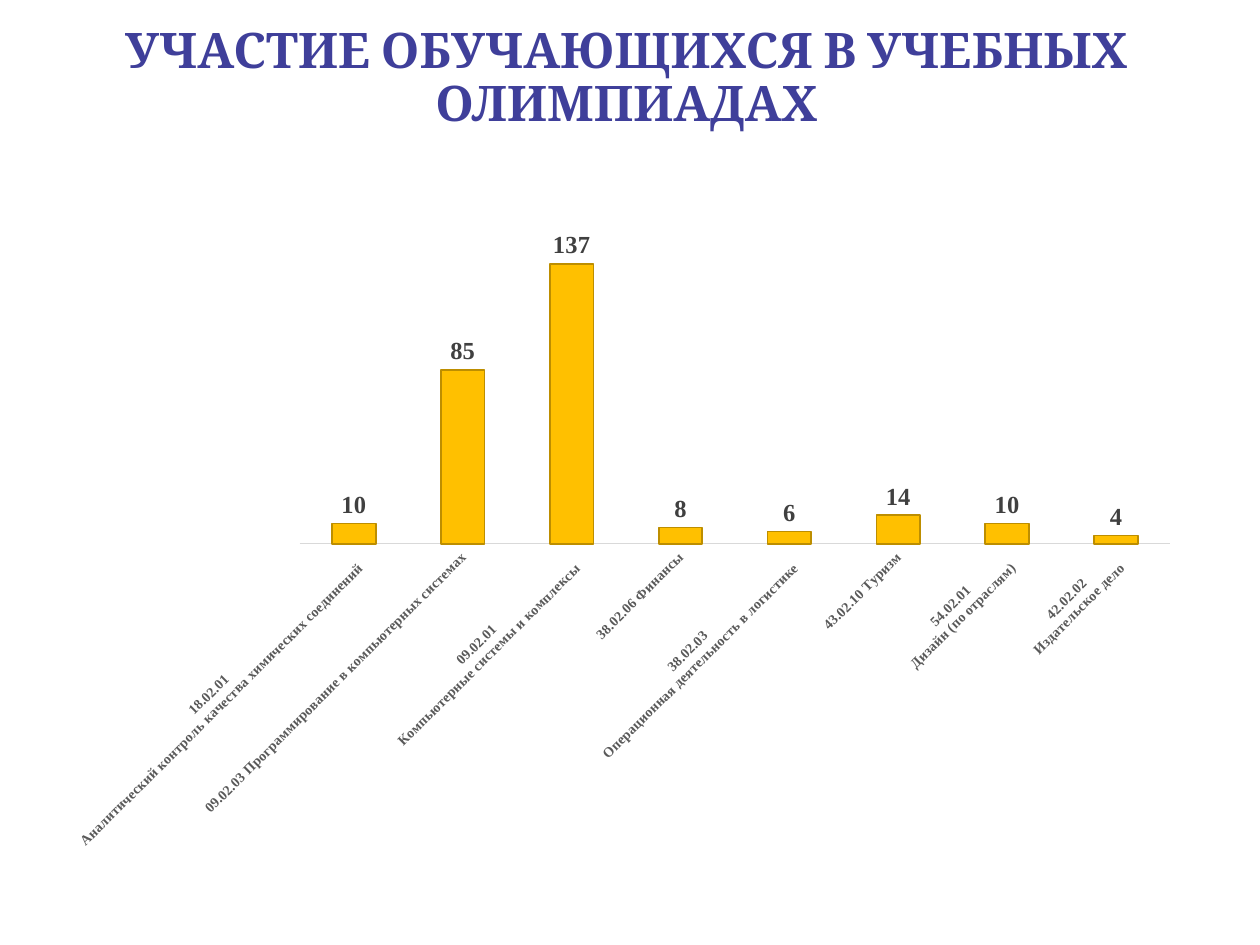
from pptx import Presentation
from pptx.chart.data import CategoryChartData
from pptx.dml.color import RGBColor
from pptx.enum.chart import XL_CHART_TYPE, XL_LABEL_POSITION, XL_TICK_MARK
from pptx.enum.text import MSO_ANCHOR, PP_ALIGN
from pptx.util import Pt

COLUMN_CLUSTERED = XL_CHART_TYPE.COLUMN_CLUSTERED
OUTSIDE_END = XL_LABEL_POSITION.OUTSIDE_END
NO_TICK = XL_TICK_MARK.NONE
MIDDLE = MSO_ANCHOR.MIDDLE
CENTER = PP_ALIGN.CENTER

INDIGO = RGBColor(0x3F, 0x3F, 0x9A)
GOLD = RGBColor(0xFF, 0xC0, 0x00)
DARK_GOLD = RGBColor(0xBD, 0x8E, 0x00)
BLACK = RGBColor(0x00, 0x00, 0x00)
DARK_GRAY = RGBColor(0x40, 0x40, 0x40)
GRAY = RGBColor(0x59, 0x59, 0x59)
LIGHT_GRAY = RGBColor(0xD9, 0xD9, 0xD9)

PARTICIPANTS = [
    ("18.02.01 \nАналитический контроль качества химических соединений", 10),
    ("09.02.03 Программирование в компьютерных системах", 85),
    ("09.02.01 \nКомпьютерные системы и комплексы", 137),
    ("38.02.06 Финансы", 8),
    ("38.02.03 \nОперационная деятельность в логистике", 6),
    ("43.02.10 Туризм", 14),
    ("54.02.01 \nДизайн (по отраслям)", 10),
    ("42.02.02 \nИздательское дело", 4),
]


def style_font(font, name, size, color):
    font.name = name
    font.size = Pt(size)
    font.bold = True
    font.color.rgb = color


presentation = Presentation()
presentation.slide_width = Pt(720)
presentation.slide_height = Pt(540)
slide = presentation.slides.add_slide(presentation.slide_layouts[6])

# Title
title = slide.shapes.add_textbox(Pt(34), Pt(0), Pt(648), Pt(90))
title.text_frame.word_wrap = True
title.text_frame.vertical_anchor = MIDDLE
paragraph = title.text_frame.paragraphs[0]
paragraph.alignment = CENTER
paragraph.line_spacing = 0.9
run = paragraph.add_run()
run.text = "УЧАСТИЕ ОБУЧАЮЩИХСЯ В УЧЕБНЫХ ОЛИМПИАДАХ"
style_font(run.font, "Cambria", 28, INDIGO)

# Column chart
chart_data = CategoryChartData()
chart_data.categories = [specialty for specialty, count in PARTICIPANTS]
chart_data.add_series("Series 1", [count for specialty, count in PARTICIPANTS])
chart = slide.shapes.add_chart(
    COLUMN_CLUSTERED, Pt(24), Pt(116.5), Pt(658), Pt(376), chart_data
).chart
chart.has_title = False
chart.has_legend = False
style_font(chart.font, "Times New Roman", 14, BLACK)

# Axes, with slanted category names
category_axis = chart.category_axis
category_axis.major_tick_mark = NO_TICK
category_axis.minor_tick_mark = NO_TICK
category_axis.format.line.color.rgb = LIGHT_GRAY
category_axis.format.line.width = Pt(0.75)
style_font(category_axis.tick_labels.font, "Times New Roman", 8, GRAY)
category_axis._element.txPr.bodyPr.set("rot", "-2700000")
chart.value_axis.visible = False
chart.value_axis.has_major_gridlines = False

# Columns and their values
plot = chart.plots[0]
plot.gap_width = 150
plot.overlap = -25
plot.vary_by_categories = False
column_format = plot.series[0].format
column_format.fill.solid()
column_format.fill.fore_color.rgb = GOLD
column_format.line.color.rgb = DARK_GOLD
column_format.line.width = Pt(1)
labels = plot.series[0].data_labels
labels.show_value = True
labels.position = OUTSIDE_END
style_font(labels.font, "Times New Roman", 14, DARK_GRAY)

presentation.save("out.pptx")
